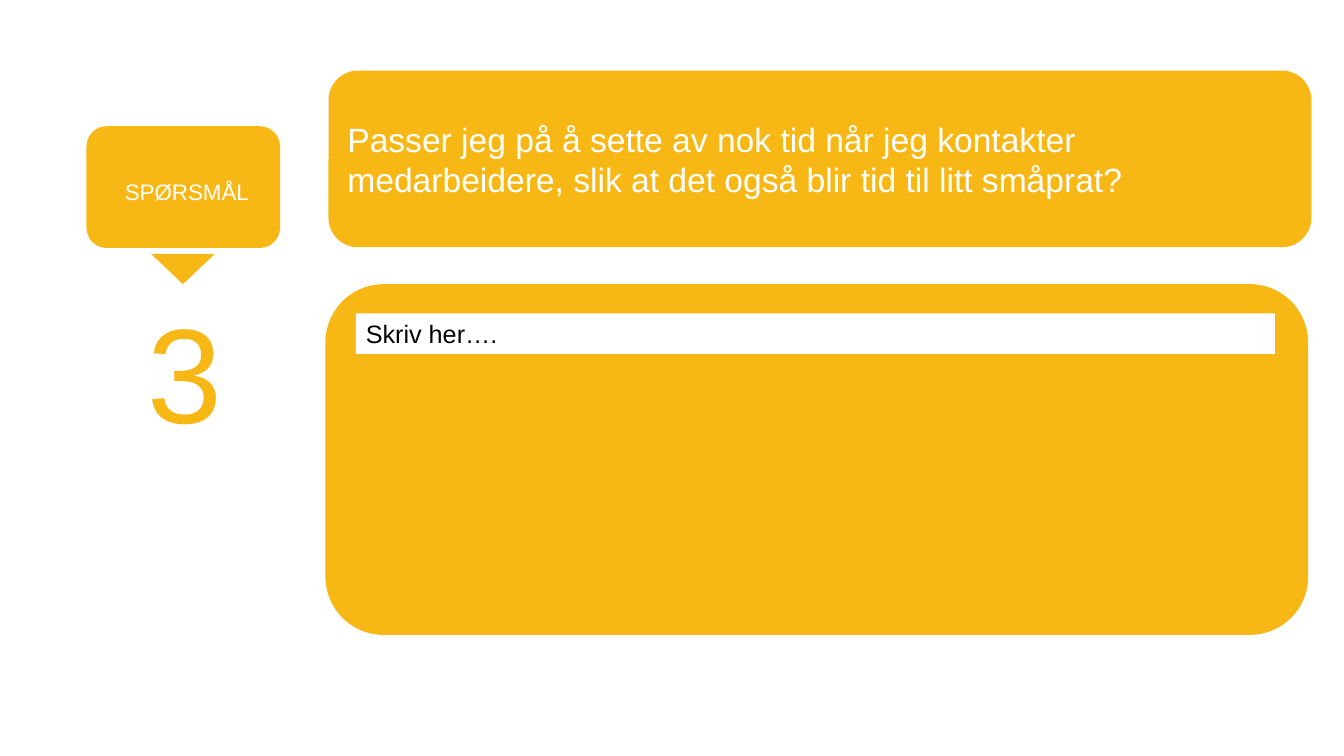
from dataclasses import dataclass

from pptx import Presentation
from pptx.dml.color import RGBColor
from pptx.enum.shapes import MSO_SHAPE
from pptx.enum.text import MSO_ANCHOR, MSO_AUTO_SIZE, PP_ALIGN
from pptx.shapes.autoshape import Shape
from pptx.shapes.shapetree import GroupShapes, SlideShapes
from pptx.util import Cm, Pt

YELLOW = RGBColor(0xF7, 0xB7, 0x15)
WHITE = RGBColor(0xFF, 0xFF, 0xFF)
BLACK = RGBColor(0x00, 0x00, 0x00)
FONT = "Arial"
PANEL_WIDTH = 24.77


@dataclass(frozen=True)
class Box:
    left: float
    top: float
    width: float
    height: float


@dataclass(frozen=True)
class Panel:
    kind: MSO_SHAPE
    box: Box
    fill: RGBColor = YELLOW
    rotation: float = 0


QUESTION = Panel(MSO_SHAPE.ROUNDED_RECTANGLE, Box(8.28, 1.78, PANEL_WIDTH, 4.45))
QUESTION_TEXT = Box(8.5, 1.78, 24.33, 4.45)
ANSWER = Panel(MSO_SHAPE.ROUNDED_RECTANGLE, Box(8.2, 7.16, PANEL_WIDTH, 8.84))
ANSWER_FIELD = Panel(MSO_SHAPE.RECTANGLE, Box(8.97, 7.9, 23.16, 1.02), WHITE)
NUMBER = Panel(MSO_SHAPE.RECTANGLE, Box(3.48, 7.16, 2.31, 4.37), WHITE)
LABEL_TEXT = Box(2.36, 3.43, 4.7, 2.79)
LABEL_BUBBLE = (
    Panel(MSO_SHAPE.ROUNDED_RECTANGLE, Box(2.18, 3.18, 4.88, 3.07)),
    Panel(MSO_SHAPE.ISOSCELES_TRIANGLE, Box(3.81, 6.4, 1.6, 0.76), rotation=180),
)


def lengths(box: Box) -> tuple[Cm, Cm, Cm, Cm]:
    return Cm(box.left), Cm(box.top), Cm(box.width), Cm(box.height)


def draw_panel(shapes: SlideShapes | GroupShapes, panel: Panel) -> Shape:
    shape = shapes.add_shape(panel.kind, *lengths(panel.box))
    shape.shadow.inherit = False
    shape.fill.solid()
    shape.fill.fore_color.rgb = panel.fill
    shape.line.fill.background()
    shape.rotation = panel.rotation
    return shape


def write_text(
    shape: Shape,
    text: str,
    *,
    size: float,
    color: RGBColor,
    align: PP_ALIGN = PP_ALIGN.LEFT,
    anchor: MSO_ANCHOR = MSO_ANCHOR.MIDDLE,
    auto_size: MSO_AUTO_SIZE = MSO_AUTO_SIZE.NONE,
) -> None:
    frame = shape.text_frame
    frame.word_wrap = True
    frame.auto_size = auto_size
    frame.vertical_anchor = anchor
    paragraph = frame.paragraphs[0]
    paragraph.alignment = align
    run = paragraph.add_run()
    run.text = text
    run.font.name = FONT
    run.font.size = Pt(size)
    run.font.color.rgb = color


def draw_label(shapes: SlideShapes) -> None:
    group = shapes.add_group_shape()
    for panel in LABEL_BUBBLE:
        draw_panel(group.shapes, panel)
    label = group.shapes.add_textbox(*lengths(LABEL_TEXT))
    write_text(label, "SPØRSMÅL", size=16, color=WHITE, align=PP_ALIGN.CENTER)


def draw_question(shapes: SlideShapes) -> None:
    panel = draw_panel(shapes, QUESTION)
    title = shapes.title
    title.left, title.top, title.width, title.height = lengths(QUESTION_TEXT)
    panel.element.addnext(title.element)
    write_text(
        title,
        "Passer jeg på å sette av nok tid når jeg kontakter medarbeidere, "
        "slik at det også blir tid til litt småprat?",
        size=24,
        color=WHITE,
    )


def draw_field(shapes: SlideShapes, panel: Panel, text: str, size: float, color: RGBColor) -> None:
    write_text(
        draw_panel(shapes, panel),
        text,
        size=size,
        color=color,
        anchor=MSO_ANCHOR.TOP,
        auto_size=MSO_AUTO_SIZE.SHAPE_TO_FIT_TEXT,
    )


def main() -> None:
    presentation = Presentation()
    presentation.slide_width = Cm(33.87)
    presentation.slide_height = Cm(19.05)
    slide = presentation.slides.add_slide(presentation.slide_layouts[5])
    draw_label(slide.shapes)
    draw_question(slide.shapes)
    draw_field(slide.shapes, NUMBER, "3", 96, YELLOW)
    draw_panel(slide.shapes, ANSWER)
    draw_field(slide.shapes, ANSWER_FIELD, "Skriv her….", 18, BLACK)
    presentation.save("out.pptx")


if __name__ == "__main__":
    main()
